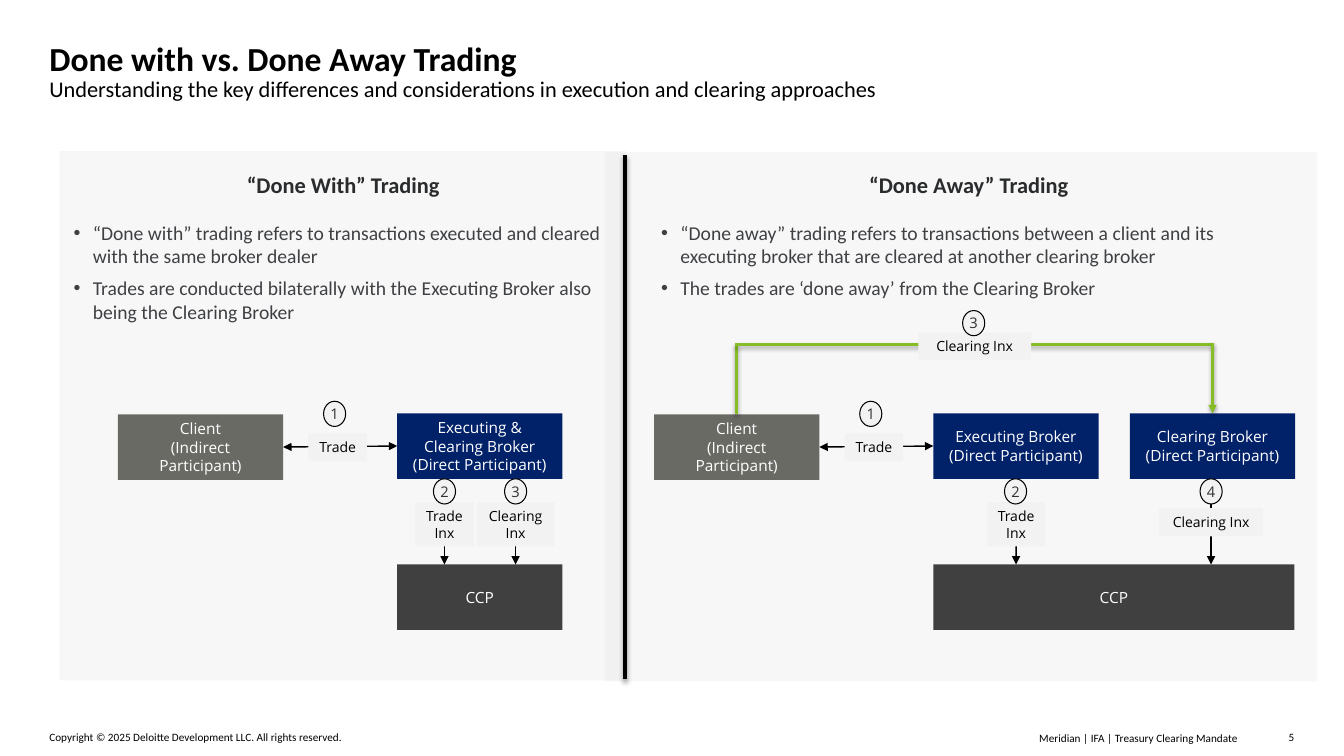
from pptx import Presentation
from pptx.dml.color import RGBColor
from pptx.enum.shapes import MSO_CONNECTOR, MSO_SHAPE
from pptx.enum.text import MSO_ANCHOR, MSO_AUTO_SIZE, PP_ALIGN
from pptx.oxml.ns import qn
from pptx.util import Pt
from lxml.etree import SubElement

BLACK = RGBColor(0x00, 0x00, 0x00)
WHITE = RGBColor(0xFF, 0xFF, 0xFF)
PANEL_GREY = RGBColor(0xD9, 0xD9, 0xD9)
LABEL_GREY = RGBColor(0xF2, 0xF2, 0xF2)
CLIENT_GREY = RGBColor(0x6A, 0x6A, 0x65)
BROKER_NAVY = RGBColor(0x01, 0x21, 0x69)
HOUSE_GREY = RGBColor(0x40, 0x40, 0x40)
GREEN = RGBColor(0x86, 0xBC, 0x25)
HEADING_INK = RGBColor(0x2A, 0x2B, 0x2D)
BODY_INK = RGBColor(0x3E, 0x40, 0x43)
BADGE_INK = RGBColor(0x31, 0x31, 0x31)

# Content
TITLE = "Done with vs. Done Away Trading"
SUBTITLE = "Understanding the key differences and considerations in execution and clearing approaches"
PANELS = [(432, 108.7, 509, 378), (42.5, 108, 404.6, 378)]
COLUMNS = [  # heading, its place, bullets, their place
    ("“Done With” Trading", (32.4, 108.7, 425.5, 33),
     ["“Done with” trading refers to transactions executed and cleared with the same broker dealer",
      "Trades are conducted bilaterally with the Executing Broker also being the Clearing Broker"],
     (45.4, 154.1, 398.9, 81.4)),
    ("“Done Away” Trading", (473.8, 108.7, 436.3, 33),
     ["“Done away” trading refers to transactions between a client and its executing broker "
      "that are cleared at another clearing broker",
      "The trades are ‘done away’ from the Clearing Broker"],
     (465.1, 154.1, 452.2, 85)),
]
FOOTERS = [  # text, place, alignment
    ("Meridian | IFA | Treasury Clearing Mandate", (499, 522.7, 385.2, 9.4), PP_ALIGN.RIGHT),
    ("Copyright © 2025 Deloitte Development LLC. All rights reserved.",
     (35.3, 522, 421.9, 9.4), PP_ALIGN.LEFT),
    ("5", (900, 522, 24.5, 9.4), PP_ALIGN.RIGHT),
]
BOX_W, BOX_H = 118.1, 46.8
ROW_Y, HOUSE_Y = 295.2, 403.2
CLIENT_X, BROKER_X, CLEARER_X = 84.2, 283.7, 807.1
AWAY_SHIFT = 383
CLIENT = ["Client", "(Indirect Participant)"]
DIRECT = "(Direct Participant)"
BOXES = {  # name: lines, left, top, width, fill
    "with client": (CLIENT, CLIENT_X, ROW_Y + 0.7, BOX_W, CLIENT_GREY),
    "with broker": (["Executing & Clearing Broker", DIRECT], BROKER_X, ROW_Y, BOX_W, BROKER_NAVY),
    "with house": (["CCP"], BROKER_X, HOUSE_Y, BOX_W, HOUSE_GREY),
    "away client": (CLIENT, CLIENT_X + AWAY_SHIFT, ROW_Y + 0.7, BOX_W, CLIENT_GREY),
    "away broker": (["Executing Broker", DIRECT], BROKER_X + AWAY_SHIFT, ROW_Y, BOX_W, BROKER_NAVY),
    "away clearer": (["Clearing Broker", DIRECT], CLEARER_X, ROW_Y, BOX_W, BROKER_NAVY),
    "away house": (["CCP"], BROKER_X + AWAY_SHIFT, HOUSE_Y, 257.8, HOUSE_GREY),
}
STEPS = [  # number, badge centre, badge top, label lines, label centre, top, width, height
    ("1", 239, 286.6, ["Trade"], 241.2, 309.6, 41.8, 19.4),
    ("2", 317.5, 342, ["Trade", "Inx"], 317.5, 358.6, 41.8, 31.7),
    ("3", 368.3, 342, ["Clearing", "Inx"], 368.3, 358.6, 55.4, 31.7),
    ("1", 622, 286.6, ["Trade"], 624.2, 309.6, 41.8, 19.4),
    ("2", 725.4, 342, ["Trade", "Inx"], 725.8, 358.6, 41.8, 31.7),
    ("3", 695.5, 221.8, ["Clearing Inx"], 696.2, 237.6, 80.6, 19.4),
    ("4", 865.1, 342, ["Clearing Inx"], 865.1, 362.9, 74.2, 20.2),
]

deck = Presentation()
deck.slide_width, deck.slide_height = Pt(960), Pt(540)
page = deck.slides.add_slide(deck.slide_layouts[4])


def apply(target, values):
    for name, value in values.items():
        setattr(target, name, value)


def place(box, spot):
    apply(box, dict(zip(("left", "top", "width", "height"), map(Pt, spot))))


def write(box, lines, size, color, font="Calibri", bold=False, align=PP_ALIGN.LEFT,
          inset=(7.2, 3.6), anchor=MSO_ANCHOR.TOP, wrap=True, spacing=1.0, gap=0, bullet=False):
    frame = box.text_frame
    apply(frame, {"word_wrap": wrap, "auto_size": MSO_AUTO_SIZE.NONE, "vertical_anchor": anchor,
                  "margin_left": Pt(inset[0]), "margin_right": Pt(inset[0]),
                  "margin_top": Pt(inset[1]), "margin_bottom": Pt(inset[1])})
    for index, line in enumerate(lines):
        para = frame.add_paragraph() if index else frame.paragraphs[0]
        props = para._p.get_or_add_pPr()
        indent = Pt(13.7) if bullet else 0
        props.set("marL", str(indent))
        props.set("indent", str(-indent))
        if bullet:
            SubElement(props, qn("a:buChar")).set("char", "•")
        apply(para, {"alignment": align, "line_spacing": spacing,
                     "space_before": Pt(gap if index else 0), "space_after": Pt(gap)})
        span = para.add_run()
        span.text = line
        apply(span.font, {"name": font, "size": Pt(size), "bold": bold})
        span.font.color.rgb = color


def add_block(kind, spot, fill, outline=None):
    box = page.shapes.add_shape(kind, *map(Pt, spot))
    box.shadow.inherit = False
    box.fill.solid()
    box.fill.fore_color.rgb = fill
    if outline is None:
        box.line.fill.background()
    else:
        box.line.color.rgb = outline
        box.line.width = Pt(0.75)
    return box


def add_line(start, end, color=BLACK, width=1, ends=(), shadow=None):
    line = page.shapes.add_connector(MSO_CONNECTOR.STRAIGHT, *map(Pt, start + end))
    line.line.color.rgb = color
    line.line.width = Pt(width)
    props = line._element.spPr
    for tag in ends:
        SubElement(props.find(qn("a:ln")), qn("a:" + tag)).set("type", "triangle")
    effects = SubElement(props, qn("a:effectLst"))
    if shadow:
        opacity, distance = shadow
        cast = SubElement(effects, qn("a:outerShdw"), blurRad=str(Pt(3.1)),
                          dist=str(Pt(distance)), dir="5400000", rotWithShape="0")
        ink = SubElement(cast, qn("a:srgbClr"), val=str(BLACK))
        SubElement(ink, qn("a:alpha"), val=str(opacity * 1000))
    return line


# Background panels and divider
for spot in PANELS:
    panel = add_block(MSO_SHAPE.RECTANGLE, spot, PANEL_GREY)
    tint = panel._element.spPr.find(qn("a:solidFill"))[0]
    SubElement(tint, qn("a:alpha"), val="20000")
add_line((446.4, 110.9), (446.4, 485.3), width=3, shadow=(35, 1.8))

# Title, subtitle and footers
place(page.shapes.title, (35.3, 27.4, 889.9, 26.6))
write(page.shapes.title, [TITLE], 24, BLACK, bold=True, inset=(0, 0))
subtitle = page.shapes.add_textbox(*map(Pt, (35.3, 54, 889.9, 59.8)))
write(subtitle, [SUBTITLE], 16, BLACK, inset=(0, 0))
for text, spot, align in FOOTERS:
    footer = page.shapes.add_textbox(*map(Pt, spot))
    write(footer, [text], 8, BLACK, align=align, inset=(0, 0))

# Column headings and lists, moved in front of the panels
for column, (heading, heading_spot, points, list_spot) in enumerate(COLUMNS):
    head, body = (page.placeholders[2 * column + offset] for offset in (1, 2))
    place(head, heading_spot)
    write(head, [heading], 16, HEADING_INK, bold=True, align=PP_ALIGN.CENTER, spacing=1.5)
    place(body, list_spot)
    write(body, points, 14, BODY_INK, gap=3, bullet=True)
    for box in (head, body):
        page.shapes._spTree.append(box._element)

# Participants
boxes = {}
for name, (lines, left, top, width, fill) in BOXES.items():
    boxes[name] = add_block(MSO_SHAPE.RECTANGLE, (left, top, width, BOX_H), fill)
    write(boxes[name], lines, 11, WHITE, "Open Sans", align=PP_ALIGN.CENTER,
          anchor=MSO_ANCHOR.MIDDLE)

# Black arrows
BOTH = ("headEnd", "tailEnd")
for side in ("with", "away"):
    trade = add_line((0, 0), (0, 0), ends=BOTH)
    trade.begin_connect(boxes[side + " client"], 3)
    trade.end_connect(boxes[side + " broker"], 1)
for x in (317.5, 368.3, 725.8, 865.1):
    drop = add_line((x, HOUSE_Y), (x, ROW_Y + BOX_H), ends=BOTH)
    if x == 725.8:
        drop.end_connect(boxes["away broker"], 2)

# Green clearing route
RAIL_Y = 246.2
client_x = CLIENT_X + AWAY_SHIFT + BOX_W / 2
clearer_x = CLEARER_X + BOX_W / 2
route = {"color": GREEN, "width": 2, "shadow": (38, 1.6)}
rise = add_line((client_x, ROW_Y), (client_x, RAIL_Y), **route)
rise.begin_connect(boxes["away client"], 0)
add_line((client_x - 1, RAIL_Y), (clearer_x, RAIL_Y), **route)
fall = add_line((clearer_x, RAIL_Y - 1), (clearer_x, ROW_Y), ends=("tailEnd",), **route)
fall.end_connect(boxes["away clearer"], 0)

# Step labels and numbers
BADGE_W, BADGE_H = 15.8, 18
centred = {"font": "Open Sans", "align": PP_ALIGN.CENTER, "anchor": MSO_ANCHOR.MIDDLE,
           "wrap": False, "inset": (0, 0)}
for number, badge_x, badge_y, lines, label_x, label_y, width, height in STEPS:
    label = add_block(MSO_SHAPE.RECTANGLE, (label_x - width / 2, label_y, width, height), LABEL_GREY)
    write(label, lines, 10, BLACK, **centred)
    badge = add_block(MSO_SHAPE.FLOWCHART_CONNECTOR,
                      (badge_x - BADGE_W / 2, badge_y, BADGE_W, BADGE_H), LABEL_GREY, BLACK)
    write(badge, [number], 10.5, BADGE_INK, **centred)

deck.save("out.pptx")
